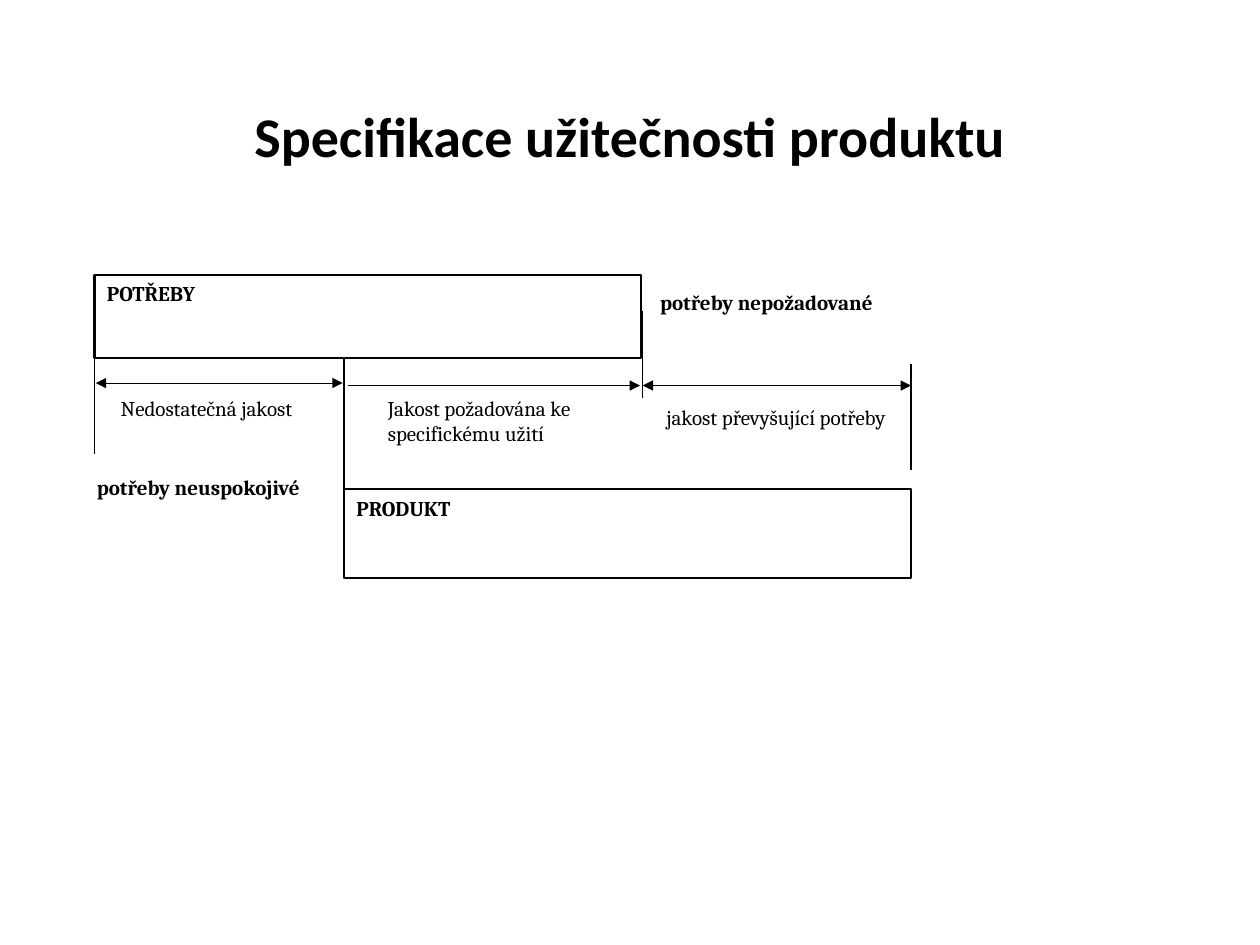
from dataclasses import dataclass

from lxml.etree import SubElement
from pptx import Presentation
from pptx.dml.color import RGBColor
from pptx.enum.shapes import MSO_CONNECTOR, MSO_SHAPE
from pptx.enum.text import MSO_ANCHOR, MSO_AUTO_SIZE, PP_ALIGN
from pptx.oxml.ns import qn
from pptx.util import Inches, Pt


@dataclass(frozen=True)
class Theme:
    ink: RGBColor = RGBColor(0, 0, 0)
    paper: RGBColor = RGBColor(255, 255, 255)
    title_font: str = "Calibri"
    body_font: str = "Cambria"
    title_size: int = 32
    body_size: int = 12
    frame_width: float = 1.25
    guide_width: float = 0.75
    arrow_width: float = 0.25


theme = Theme()


def write(frame, text, font=theme.body_font, size=theme.body_size, bold=False,
          align=PP_ALIGN.LEFT, anchor=MSO_ANCHOR.TOP, after=10, spacing=None):
    frame.word_wrap = True
    frame.auto_size = MSO_AUTO_SIZE.NONE
    frame.vertical_anchor = anchor
    paragraph = frame.paragraphs[0]
    paragraph.alignment = align
    paragraph.space_after = Pt(after)
    if spacing:
        paragraph.line_spacing = Pt(spacing)
    run = paragraph.add_run()
    run.text = text
    run.font.name = font
    run.font.size = Pt(size)
    run.font.bold = bold
    run.font.color.rgb = theme.ink


def draw_line(x1, y1, x2, y2, width, arrowheads=()):
    connector = slide.shapes.add_connector(
        MSO_CONNECTOR.STRAIGHT, Inches(x1), Inches(y1), Inches(x2), Inches(y2))
    connector.line.color.rgb = theme.ink
    connector.line.width = Pt(width)
    outline = connector.line._get_or_add_ln()
    for end in arrowheads:
        SubElement(outline, qn(f"a:{end}"), type="triangle")
    SubElement(connector._element.spPr, qn("a:effectLst"))


presentation = Presentation()
presentation.slide_width = Inches(10)
presentation.slide_height = Inches(7.5)
slide = presentation.slides.add_slide(presentation.slide_layouts[5])

title = slide.shapes.title
title.left, title.top, title.width, title.height = map(Inches, (0.5, 0.3, 9, 1.25))
heading = title.text_frame
heading.margin_left = heading.margin_right = heading.margin_bottom = 0
heading.margin_top = Inches(0.03)
write(heading, "Specifikace užitečnosti produktu", font=theme.title_font,
      size=theme.title_size, bold=True, align=PP_ALIGN.CENTER,
      anchor=MSO_ANCHOR.MIDDLE, after=0, spacing=58)

needs_left, product_left, needs_right, product_right = 0.75, 2.73, 5.1, 7.23
needs_bottom, product_top = 2.84, 3.88

for name, left, top, width, height in (
    ("POTŘEBY", needs_left, 2.18, 4.34, 0.66),
    ("PRODUKT", product_left, product_top, 4.5, 0.71),
):
    bar = slide.shapes.add_shape(
        MSO_SHAPE.RECTANGLE, Inches(left), Inches(top), Inches(width), Inches(height))
    bar.shadow.inherit = False
    bar.fill.solid()
    bar.fill.fore_color.rgb = theme.paper
    bar.line.color.rgb = theme.ink
    bar.line.width = Pt(theme.frame_width)
    write(bar.text_frame, name, bold=True)

for label, left, top, width, height, bold in (
    ("Nedostatečná jakost", 0.86, 3.09, 1.65, 0.62, False),
    ("jakost převyšující potřeby", 5.19, 3.16, 2.36, 0.55, False),
    ("potřeby nepožadované", 5.14, 2.25, 2.63, 0.58, True),
    ("Jakost požadována ke specifickému užití", 2.98, 3.09, 1.99, 0.64, False),
    ("potřeby neuspokojivé", 0.67, 3.72, 2.09, 0.75, True),
):
    caption = slide.shapes.add_textbox(
        Inches(left), Inches(top), Inches(width), Inches(height))
    write(caption.text_frame, label, bold=bold)

for x, start, end in (
    (product_left, needs_bottom, product_top),
    (needs_right, 2.47, 3.16),
    (product_right, 3.73, 2.89),
    (needs_left, 2.45, 3.6),
):
    draw_line(x, start, x, end, theme.guide_width)

both_ends = ("headEnd", "tailEnd")
for start, end, y, arrowheads in (
    (0.76, 2.72, 3.04, both_ends),
    (2.76, 5.08, 3.06, ("tailEnd",)),
    (needs_right, product_right, 3.06, both_ends),
):
    draw_line(start, y, end, y, theme.arrow_width, arrowheads)

presentation.save("out.pptx")
